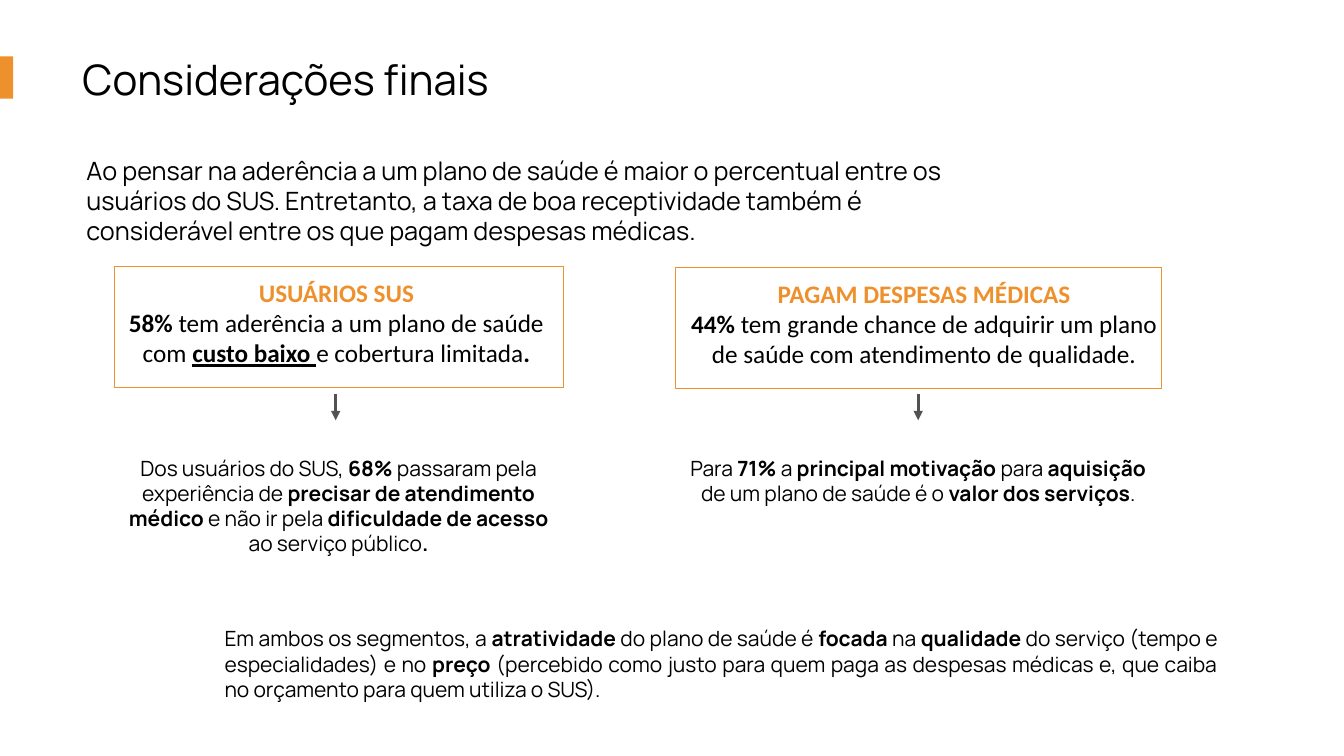
from dataclasses import dataclass

from lxml.etree import SubElement
from pptx import Presentation
from pptx.dml.color import RGBColor
from pptx.enum.shapes import MSO_CONNECTOR as Connector, MSO_SHAPE as Shape
from pptx.enum.text import MSO_AUTO_SIZE as AutoSize, PP_ALIGN as Align
from pptx.oxml.ns import qn
from pptx.slide import Slide
from pptx.util import Cm, Pt


@dataclass(frozen=True)
class Theme:
    accent: RGBColor = RGBColor(0xEE, 0x90, 0x2C)
    ink: RGBColor = RGBColor(0, 0, 0)
    arrow: RGBColor = RGBColor(0x52, 0x52, 0x52)
    main_font: str = "Manrope"
    card_font: str = "Calibri"
    title: Pt = Pt(30)
    lead: Pt = Pt(18)
    body: Pt = Pt(15)
    frame_width: Pt = Pt(0.25)
    arrow_width: Pt = Pt(2.25)


THEME = Theme()


@dataclass(frozen=True)
class Box:
    left: float
    top: float
    width: float
    height: float

    def lengths(self) -> tuple[Cm, ...]:
        return Cm(self.left), Cm(self.top), Cm(self.width), Cm(self.height)


@dataclass(frozen=True)
class Run:
    text: str
    bold: bool = False
    underline: bool = False
    color: RGBColor = THEME.ink


@dataclass(frozen=True)
class TextBlock:
    box: Box
    paragraphs: list[list[Run]]
    size: Pt = THEME.body
    font: str = THEME.main_font
    alignment: Align = Align.LEFT


@dataclass(frozen=True)
class Segment:
    frame: Box
    card_box: Box
    heading: str
    finding: list[Run]
    detail_height: float
    detail: list[Run]
    arrow_x: float


def emphasize(marked: str) -> list[Run]:
    parts = marked.split("*")
    return [Run(part, bold=index % 2 == 1) for index, part in enumerate(parts) if part]


def add_text(slide: Slide, block: TextBlock) -> None:
    frame = slide.shapes.add_textbox(*block.box.lengths()).text_frame
    frame.word_wrap = True
    frame.auto_size = AutoSize.SHAPE_TO_FIT_TEXT
    for index, runs in enumerate(block.paragraphs):
        paragraph = frame.add_paragraph() if index else frame.paragraphs[0]
        paragraph.alignment = block.alignment
        for item in runs:
            run = paragraph.add_run()
            run.text = item.text
            formats = {"name": block.font, "size": block.size,
                       "bold": item.bold, "underline": item.underline}
            for name, value in formats.items():
                setattr(run.font, name, value)
            run.font.color.rgb = item.color


def add_rectangle(slide: Slide, box: Box, filled: bool) -> None:
    shape = slide.shapes.add_shape(Shape.RECTANGLE, *box.lengths())
    shape.shadow.inherit = False
    if filled:
        shape.fill.solid()
        shape.fill.fore_color.rgb = THEME.accent
        shape.line.fill.background()
    else:
        shape.fill.background()
        shape.line.color.rgb = THEME.accent
        shape.line.width = THEME.frame_width


def add_arrow(slide: Slide, x: float, top: float, bottom: float) -> None:
    arrow = slide.shapes.add_connector(
        Connector.STRAIGHT, Cm(x), Cm(top), Cm(x), Cm(bottom))
    arrow.line.color.rgb = THEME.arrow
    arrow.line.width = THEME.arrow_width
    SubElement(arrow.line._get_or_add_ln(), qn("a:tailEnd"), type="triangle")
    SubElement(arrow._element.spPr, qn("a:effectLst"))


def add_segment(slide: Slide, segment: Segment) -> None:
    heading = [Run(segment.heading, bold=True, color=THEME.accent)]
    detail_box = Box(segment.frame.left, 11.35, segment.frame.width, segment.detail_height)
    add_text(slide, TextBlock(segment.card_box, [heading, segment.finding],
                              THEME.lead, THEME.card_font, Align.CENTER))
    add_rectangle(slide, segment.frame, filled=False)
    add_text(slide, TextBlock(detail_box, [segment.detail], alignment=Align.CENTER))
    add_arrow(slide, segment.arrow_x, 9.93, 10.59)


TEXTS = [
    TextBlock(Box(1.83, 1.22, 27.97, 1.55), [[Run("Considerações finais")]],
              THEME.title, alignment=Align.JUSTIFY),
    TextBlock(Box(1.93, 3.78, 23.14, 2.57), [[Run(
        "Ao pensar na aderência a um plano de saúde é maior o percentual entre os "
        "usuários do SUS. Entretanto, a taxa de boa receptividade também é "
        "considerável entre os que pagam despesas médicas.")]], THEME.lead),
    TextBlock(Box(5.41, 15.65, 25.53, 2.18), [emphasize(
        "Em ambos os segmentos, a *atratividade* do plano de saúde é *focada* na "
        "*qualidade* do serviço (tempo e especialidades) e no *preço* (percebido "
        "como justo para quem paga as despesas médicas e, que caiba no orçamento "
        "para quem utiliza o SUS).")], alignment=Align.JUSTIFY),
]

SEGMENTS = [
    Segment(
        frame=Box(2.87, 6.71, 11.33, 3.05),
        card_box=Box(2.64, 6.86, 11.68, 2.57),
        heading="USUÁRIOS SUS",
        finding=[
            *emphasize("*58%* tem aderência a um plano de saúde com "),
            Run("custo baixo ", bold=True, underline=True),
            *emphasize("e cobertura limitada*.*"),
        ],
        detail_height=2.82,
        detail=emphasize(
            "Dos usuários do SUS, *68%* passaram pela experiência de *precisar de "
            "atendimento médico *e não ir pela *dificuldade de acesso *ao serviço "
            "público*.*"),
        arrow_x=8.46,
    ),
    Segment(
        frame=Box(17.02, 6.73, 12.24, 3.05),
        card_box=Box(16.99, 6.88, 12.6, 2.57),
        heading="PAGAM DESPESAS MÉDICAS",
        finding=emphasize("*44%* tem grande chance de adquirir um plano de saúde com "
                          "atendimento de qualidade."),
        detail_height=1.55,
        detail=emphasize("Para *71%* a *principal motivação *para *aquisição* de um plano "
                         "de saúde é o *valor dos serviços*."),
        arrow_x=23.14,
    ),
]


def main() -> None:
    presentation = Presentation()
    presentation.slide_width, presentation.slide_height = Cm(33.87), Cm(19.05)
    slide = presentation.slides.add_slide(presentation.slide_layouts[6])
    add_rectangle(slide, Box(0, 1.42, 0.33, 1.07), filled=True)
    for block in TEXTS:
        add_text(slide, block)
    for segment in SEGMENTS:
        add_segment(slide, segment)
    presentation.save("out.pptx")


if __name__ == "__main__":
    main()
